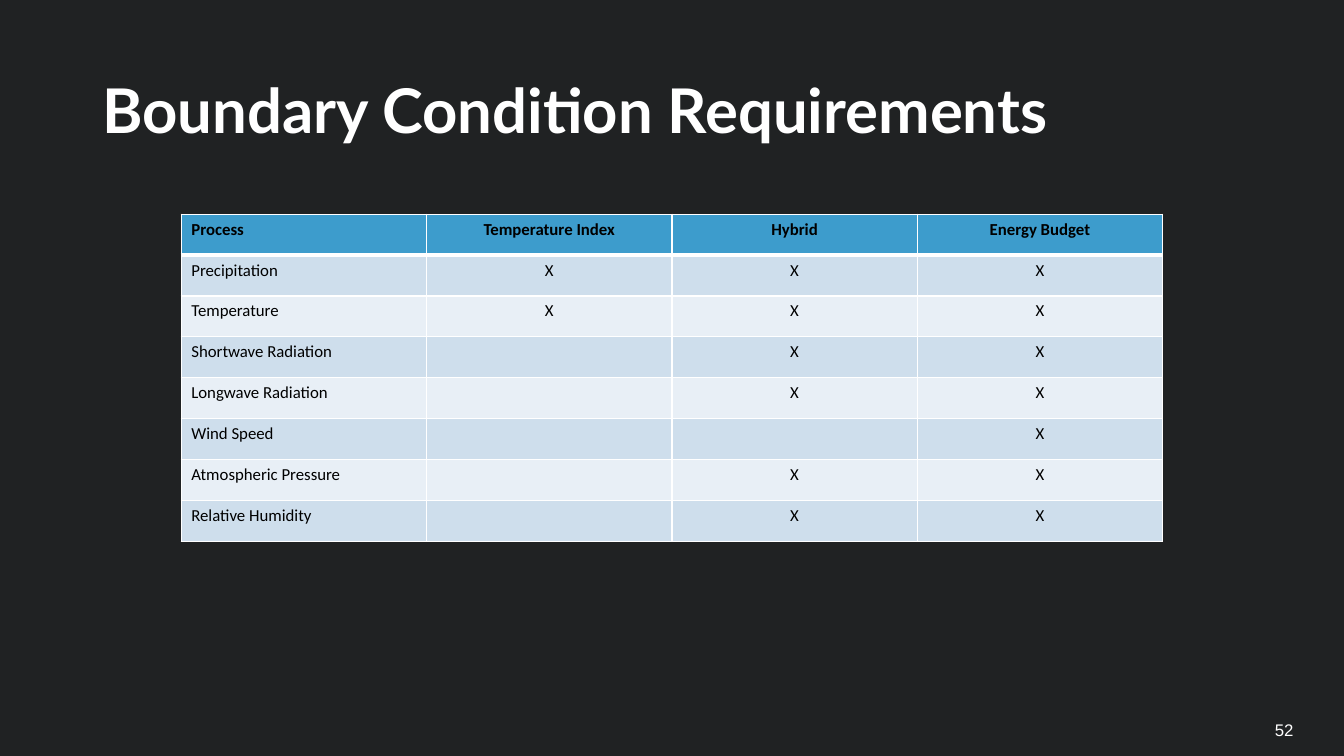
from lxml import etree
from pptx import Presentation
from pptx import util as u
from pptx.dml.color import RGBColor
from pptx.enum import text
from pptx.oxml.ns import qn

LEFT, MID = text.PP_ALIGN.LEFT, text.PP_ALIGN.CENTER
HEADS = ["Process", "Temperature Index", "Hybrid", "Energy Budget"]
# Each process with the number of methods, counted from the right, that need it
NEEDS = [
    ("Precipitation", "XXX"),
    ("Temperature", "XXX"),
    ("Shortwave Radiation", "XX"),
    ("Longwave Radiation", "XX"),
    ("Wind Speed", "X"),
    ("Atmospheric Pressure", "XX"),
    ("Relative Humidity", "XX"),
]


def color(code):
    return RGBColor.from_string(code)


class Deck:
    back, white, black = "202223", "FFFFFF", "000000"
    head, bands = "3D9CCC", ("E8EFF6", "CEDEEC")

    def __init__(self, wide, high):
        self.show = Presentation()
        self.show.slide_width, self.show.slide_height = u.Pt(wide), u.Pt(high)
        self.slide = self.show.slides.add_slide(self.show.slide_layouts[6])
        fill = self.slide.background.fill
        fill.solid()
        fill.fore_color.rgb = color(self.back)

    def style(self, par, font, size, code, bold=False, align=LEFT):
        par.alignment = align
        for run in par.runs:
            run.font.name, run.font.size = font, u.Pt(size)
            run.font.bold = bold
            run.font.color.rgb = color(code)

    def label(self, words, box, font, size, bold=False, align=LEFT, space=1.0):
        frame = self.slide.shapes.add_textbox(*map(u.Pt, box)).text_frame
        frame.word_wrap = True
        frame.vertical_anchor = text.MSO_ANCHOR.MIDDLE
        frame.text = words
        par = frame.paragraphs[0]
        par.line_spacing = space
        self.style(par, font, size, self.white, bold, align)

    def border(self, cell, side, width):
        props = cell._tc.get_or_add_tcPr()
        line = etree.SubElement(props, qn("a:ln" + side), w=str(u.Pt(width)))
        fill = etree.SubElement(line, qn("a:solidFill"))
        etree.SubElement(fill, qn("a:srgbClr"), val=self.white)

    def table(self, rows, box):
        shape = self.slide.shapes.add_table(len(rows), len(rows[0]), *map(u.Pt, box))
        for r, row in enumerate(rows):
            for c, words in enumerate(row):
                cell = shape.table.cell(r, c)
                for side in "LRTB":
                    thick = (r, side) in ((0, "B"), (1, "T"))
                    self.border(cell, side, 3 if thick else 1)
                cell.fill.solid()
                cell.fill.fore_color.rgb = color(self.bands[r % 2] if r else self.head)
                if words:
                    cell.text = words
                    self.style(cell.text_frame.paragraphs[0], "Calibri", 12,
                               self.black, r == 0, MID if c else LEFT)


def main():
    deck = Deck(960, 540)
    rows = [HEADS] + [[name, *marks.rjust(3).replace(" ", "-")] for name, marks in NEEDS]
    rows = [["" if words == "-" else words for words in row] for row in rows]
    deck.table(rows, (129.5, 153, 701, 233.6))
    deck.label("Boundary Condition Requirements", (66, 28.75, 828, 104.4),
               "Lato", 44, bold=True, space=0.9)
    deck.label("52", (885.6, 508.6, 63.4, 25.2), "Arial", 12, align=MID)
    deck.show.save("out.pptx")


if __name__ == "__main__":
    main()
